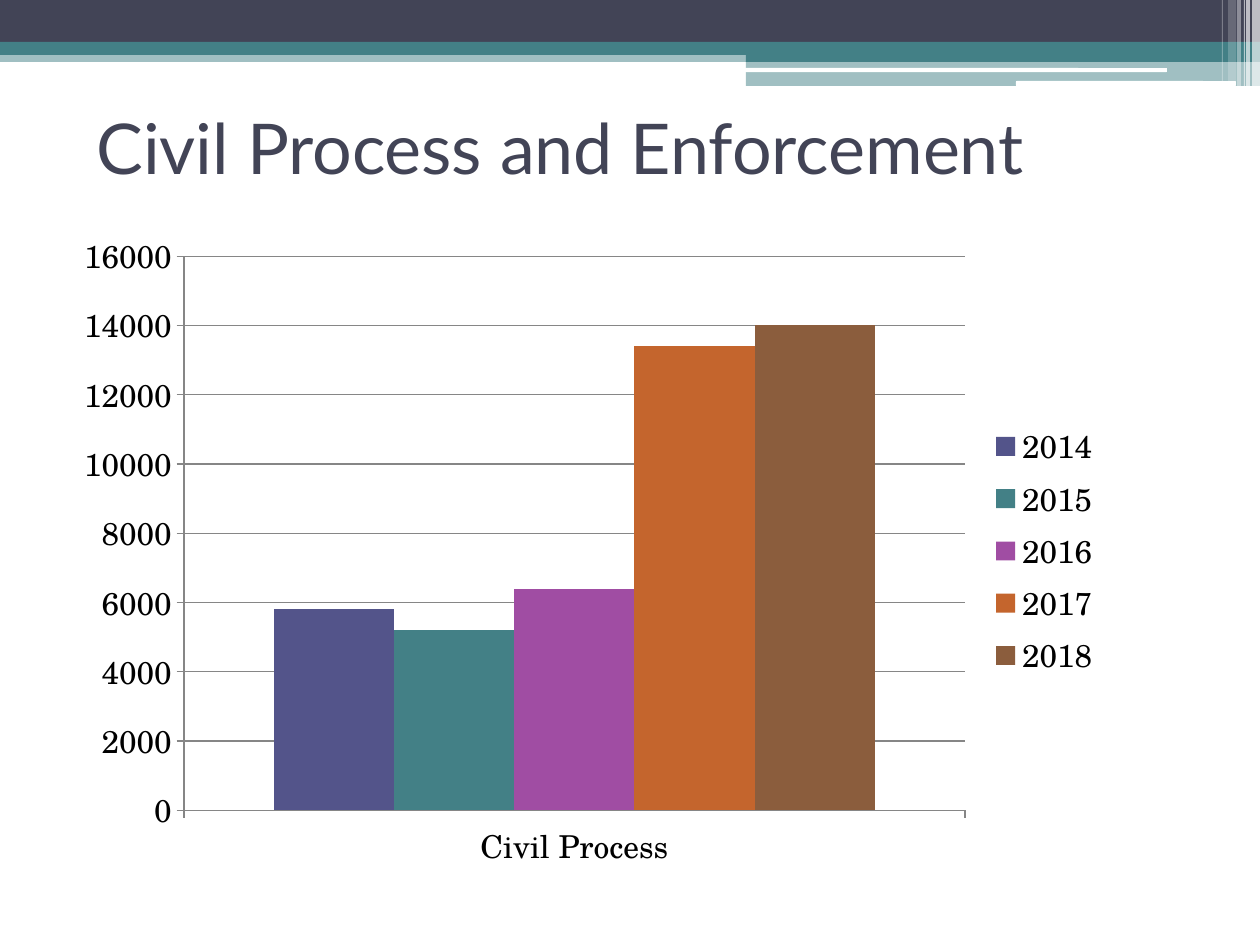
from pptx import Presentation
from pptx.chart.data import CategoryChartData
from pptx.dml.color import RGBColor
from pptx.enum.chart import XL_CHART_TYPE as ChartType, XL_LEGEND_POSITION as LegendPosition
from pptx.enum.chart import XL_TICK_MARK as TickMark
from pptx.enum.shapes import MSO_SHAPE as Shape
from pptx.enum.text import MSO_ANCHOR as Anchor
from pptx.oxml.ns import qn
from pptx.util import Pt
from lxml import etree

PX = 914400 / 126
WIDTH, HEIGHT = 1260, 945
COLOURS = {
    "navy": "424456", "teal": "438086", "white": "FFFFFF", "black": "000000",
    "grid": "868686", "indigo": "53548A", "purple": "A04DA3",
    "orange": "C4652D", "brown": "8B5D3D",
}

# left, top, width, height, colour, opacity in percent
HEADER_BANDS = [
    (0, 50, WIDTH, 12, "teal", 50),
    (0, 0, WIDTH, 42, "navy", 100),
    (0, 42, WIDTH, 13, "teal", 100),
    (746, 49, 514, 13, "teal", 100),
    (746, 61, 514, 25, "teal", 50),
]
HEADER_CUTS = [(745, 68, 422, 4), (1016, 81, 220, 5)]
# left, width, height, opacity in percent
CORNER_STRIPES = [
    (1252, 8, 86, 65), (1246, 4, 86, 65), (1244, 1, 86, 60),
    (1237, 4, 86, 40), (1228, 8, 81, 20), (1222, 1, 81, 30),
]
CASES_BY_YEAR = [
    ("2014", 5800, "indigo"), ("2015", 5200, "teal"), ("2016", 6400, "purple"),
    ("2017", 13400, "orange"), ("2018", 14000, "brown"),
]


def px(*lengths):
    return [round(length * PX) for length in lengths]


def rgb(name):
    return RGBColor.from_string(COLOURS[name])


class SlideBuilder:
    """Holds the fonts and the slide that is being filled."""

    title_font = "Lato"
    chart_font = "TeX Gyre Schola"

    def __init__(self, slide):
        self.slide = slide

    def band(self, left, top, width, height, colour, opacity=100, kind=Shape.RECTANGLE):
        shape = self.slide.shapes.add_shape(kind, *px(left, top, width, height))
        shape.shadow.inherit = False
        shape.fill.solid()
        shape.fill.fore_color.rgb = rgb(colour)
        shape.line.fill.background()
        if opacity < 100:
            colour_element = shape.fill._xPr.find(".//" + qn("a:srgbClr"))
            etree.SubElement(colour_element, qn("a:alpha"), val=str(opacity * 1000))

    def title(self, text, left, top, width, height):
        frame = self.slide.shapes.add_textbox(*px(left, top, width, height)).text_frame
        frame.word_wrap = True
        frame.vertical_anchor = Anchor.MIDDLE
        paragraph = frame.paragraphs[0]
        paragraph.text = text
        paragraph.font.name = self.title_font
        paragraph.font.size = Pt(40)
        paragraph.font.color.rgb = rgb("navy")

    def column_chart(self, category, series_rows, left, top, width, height):
        data = CategoryChartData()
        data.categories = [category]
        for name, value, _ in series_rows:
            data.add_series(name, [value])
        chart = self.slide.shapes.add_chart(
            ChartType.COLUMN_CLUSTERED, *px(left, top, width, height), data).chart
        chart.has_title = False
        chart.font.name = self.chart_font
        chart.font.size = Pt(18)
        chart.font.color.rgb = rgb("black")
        chart.has_legend = True
        chart.legend.position = LegendPosition.RIGHT
        chart.legend.include_in_layout = False

        plot = chart.plots[0]
        plot.gap_width = 150
        plot.overlap = 0
        plot.vary_by_categories = False
        for series, (_, _, colour) in zip(plot.series, series_rows):
            series.format.fill.solid()
            series.format.fill.fore_color.rgb = rgb(colour)

        value_axis = chart.value_axis
        value_axis.minimum_scale = 0
        value_axis.maximum_scale = 16000
        value_axis.major_unit = 2000
        value_axis.has_major_gridlines = True
        lines = [value_axis.major_gridlines.format.line]
        for axis in (chart.category_axis, value_axis):
            axis.major_tick_mark = TickMark.OUTSIDE
            lines.append(axis.format.line)
        for line in lines:
            line.color.rgb = rgb("grid")
            line.width = Pt(0.75)


def main():
    presentation = Presentation()
    presentation.slide_width, presentation.slide_height = px(WIDTH, HEIGHT)
    builder = SlideBuilder(presentation.slides.add_slide(presentation.slide_layouts[6]))

    for band in HEADER_BANDS:
        builder.band(*band)
    for cut in HEADER_CUTS:
        builder.band(*cut, "white", kind=Shape.ROUNDED_RECTANGLE)
    for left, width, height, opacity in CORNER_STRIPES:
        builder.band(left, 0, width, height, "white", opacity)

    builder.title("Civil Process and Enforcement", 84, 73, 1134, 147)
    builder.column_chart("Civil Process", CASES_BY_YEAR, 63, 220, 1050, 662)
    presentation.save("out.pptx")


if __name__ == "__main__":
    main()
